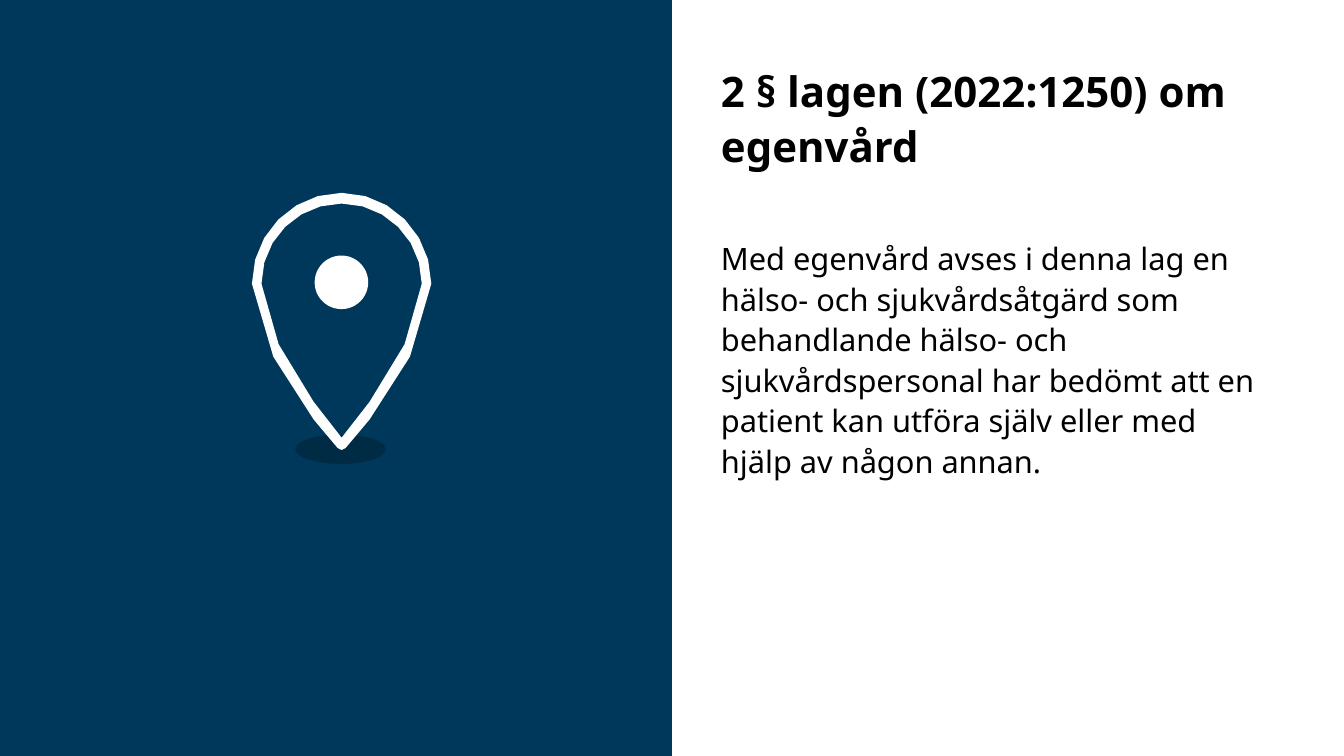
import dataclasses

import pptx
import pptx.dml.color
import pptx.enum.shapes
import pptx.enum.text
import pptx.util

Cm = pptx.util.Cm
Pt = pptx.util.Pt
RGB = pptx.dml.color.RGBColor.from_string
ANCHOR = pptx.enum.text.MSO_ANCHOR
SHAPE = pptx.enum.shapes.MSO_SHAPE


@dataclasses.dataclass(frozen=True)
class Theme:
    font: str = "Noto Sans"
    ink: str = "000000"
    panel: str = "00385C"
    shade: str = "002B45"
    white: str = "FFFFFF"
    heading_size: float = 30
    heading_pitch: float = 39.4
    body_size: float = 22
    body_pitch: float = 29


THEME = Theme()
UNITS_PER_CM = 1000
SLIDE_WIDTH, SLIDE_HEIGHT = 33.87, 19.05

PIN_OUTER = [
    (6, [(0, 0), (1.24, 0), (2.26, 1.03), (2.26, 2.29)]),
    (3, [(2.26, 4.05), (0.2, 6.35), (0.1, 6.43)]),
    (1, [(0.07, 6.46), (0.04, 6.48), (0, 6.48)]),
]
PIN_INNER = [
    (6, [(0, 0.27), (1.1, 0.27), (2.02, 1.16), (2.02, 2.29)]),
    (3, [(2.02, 3.7), (0.41, 5.69), (0, 6.17)]),
]


def apply_format(target, values):
    for name, value in values.items():
        setattr(target, name, value)


def paint(shape, color):
    shape.shadow.inherit = False
    shape.fill.solid()
    shape.fill.fore_color.rgb = RGB(color)
    shape.line.fill.background()


def add_filled(shapes, kind, box, color):
    filled = shapes.add_shape(kind, *map(Cm, box))
    paint(filled, color)


def bezier(a, b, c, d, t):
    u = 1 - t
    return tuple(
        u**3 * p + 3 * u * u * t * q + 3 * u * t * t * r + t**3 * s
        for p, q, r, s in zip(a, b, c, d)
    )


def mirrored_outline(curves):
    half = [curves[0][1][0]]
    for steps, curve in curves:
        controls = [half[-1], *curve[-3:]]
        half += [bezier(*controls, step / steps) for step in range(1, steps + 1)]
    outline = half + [(-x, y) for x, y in half[-2:0:-1]]
    return [(round(x * UNITS_PER_CM), round(y * UNITS_PER_CM)) for x, y in outline]


def add_pin(shapes, center, top):
    pin = shapes.add_group_shape().shapes
    add_filled(pin, SHAPE.OVAL, (center - 0.68, top + 1.58, 1.35, 1.35), THEME.white)
    outer, inner = map(mirrored_outline, (PIN_OUTER, PIN_INNER))
    builder = pin.build_freeform(*outer[0], scale=Cm(1) / UNITS_PER_CM)
    builder.add_line_segments(outer[1:], close=True)
    builder.move_to(*inner[0])
    builder.add_line_segments(inner[1:], close=True)
    paint(builder.convert_to_shape(Cm(center), Cm(top)), THEME.white)


def add_icon_panel(slide, box):
    left, top, width, height = box
    pin_center, pin_top = left + 8.61, top + 4.86
    add_filled(slide.shapes, SHAPE.RECTANGLE, box, THEME.panel)
    add_filled(slide.shapes, SHAPE.OVAL,
               (pin_center - 1.17, pin_top + 6.09, 2.29, 0.74), THEME.shade)
    add_pin(slide.shapes, pin_center, pin_top)


def add_text(slide, box, text, frame_format, font_format, pitch):
    frame = slide.shapes.add_textbox(*map(Cm, box)).text_frame
    apply_format(frame, {"word_wrap": True, "margin_left": 0, **frame_format})
    paragraph = frame.paragraphs[0]
    paragraph.line_spacing = Pt(pitch)
    run = paragraph.add_run()
    run.text = text
    apply_format(run.font, {"name": THEME.font, **font_format})
    run.font.color.rgb = RGB(THEME.ink)


def add_law_text(slide, box):
    left, top, width, height = box
    add_text(
        slide, (left, top, width, 3), "2 § lagen (2022:1250) om egenvård",
        {"margin_top": 0, "margin_right": Cm(0.25), "margin_bottom": Cm(0.2),
         "vertical_anchor": ANCHOR.BOTTOM},
        {"size": Pt(THEME.heading_size), "bold": True}, THEME.heading_pitch,
    )
    add_text(
        slide, (left, top + 4.32, width - 0.23, height - 4.32),
        "Med egenvård avses i denna lag en hälso- och sjukvårdsåtgärd som "
        "behandlande hälso- och sjukvårdspersonal har bedömt att en patient "
        "kan utföra själv eller med hjälp av någon annan.",
        {"margin_top": Cm(0.13), "margin_right": 0, "margin_bottom": Cm(0.13),
         "vertical_anchor": ANCHOR.TOP},
        {"size": Pt(THEME.body_size), "bold": False}, THEME.body_pitch,
    )


def main():
    presentation = pptx.Presentation()
    apply_format(presentation, {"slide_width": Cm(SLIDE_WIDTH), "slide_height": Cm(SLIDE_HEIGHT)})
    slide = presentation.slides.add_slide(presentation.slide_layouts[6])
    add_law_text(slide, (18.17, 1.5, 14.05, 15.77))
    add_icon_panel(slide, (0, 0, SLIDE_WIDTH / 2, SLIDE_HEIGHT))
    presentation.save("out.pptx")


if __name__ == "__main__":
    main()
